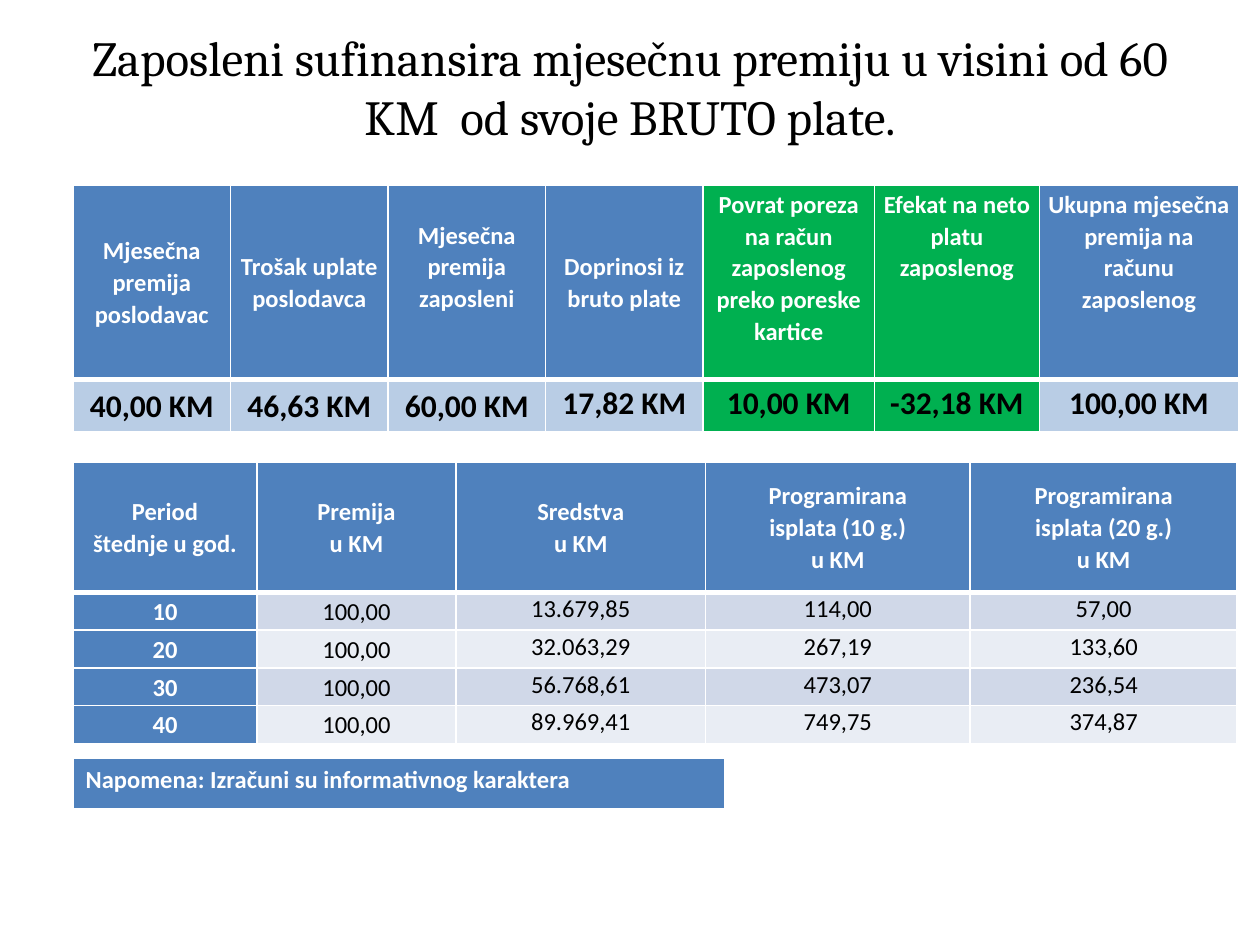
"""Build a slide on how an employee co-finances a monthly pension premium."""
from dataclasses import dataclass

from lxml.etree import SubElement
from pptx import Presentation
from pptx.dml.color import RGBColor
from pptx.enum.text import MSO_ANCHOR, PP_ALIGN
from pptx.oxml.ns import qn
from pptx.util import Inches, Pt


@dataclass(frozen=True)
class Theme:
    title_font: str = "Cambria"
    body_font: str = "Calibri"
    title_size: int = 28
    text_size: int = 14
    amount_size: int = 18
    black: str = "000000"
    white: str = "FFFFFF"
    blue: str = "4F81BD"
    green: str = "00B050"
    light_blue: str = "B9CDE5"
    bands: tuple = ("D0D8E8", "E9EDF4")
    thin: int = 1
    thick: int = 3


THEME = Theme()
LEFT = 0.58

PREMIUM_COLS = [1.25, 1.25, 1.25, 1.25, 1.36, 1.31, 1.58]
PREMIUM_HEADS = [
    "Mjesečna premija poslodavac",
    "Trošak uplate poslodavca",
    "Mjesečna premija zaposleni",
    "Doprinosi iz bruto plate",
    "Povrat poreza na račun zaposlenog preko poreske kartice",
    "Efekat na neto platu zaposlenog",
    "Ukupna mjesečna premija na računu zaposlenog",
]
PREMIUM_AMOUNTS = ["40,00 KM", "46,63 KM", "60,00 KM", "17,82 KM",
                   "10,00 KM", "-32,18 KM", "100,00 KM"]
GREEN_COLS = (4, 5)

SAVINGS_COLS = [1.46, 1.58, 1.98, 2.1, 2.12]
SAVINGS_HEADS = [
    "Period\nštednje u god.",
    "Premija\nu KM",
    "Sredstva\nu KM",
    "Programirana\nisplata (10 g.)\nu KM",
    "Programirana\nisplata (20 g.)\nu KM",
]
SAVINGS_ROWS = [
    ["10", "100,00", "13.679,85", "114,00", "57,00"],
    ["20", "100,00", "32.063,29", "267,19", "133,60"],
    ["30", "100,00", "56.768,61", "473,07", "236,54"],
    ["40", "100,00", "89.969,41", "749,75", "374,87"],
]


def style_paragraph(p, font, size, color, bold=False, align=PP_ALIGN.CENTER):
    """Set alignment and font of a paragraph."""
    p.alignment = align
    p.font.name = font
    p.font.size = Pt(size)
    p.font.bold = bold
    p.font.color.rgb = RGBColor.from_string(color)


def set_borders(cell, top, bottom):
    """Give a cell white borders, ahead of its fill in the XML."""
    tc_pr = cell._tc.get_or_add_tcPr()
    widths = {"a:lnL": THEME.thin, "a:lnR": THEME.thin, "a:lnT": top, "a:lnB": bottom}
    for tag, width in widths.items():
        ln = SubElement(tc_pr, qn(tag), w=str(Pt(width)))
        SubElement(SubElement(ln, qn("a:solidFill")), qn("a:srgbClr"), val=THEME.white)


def fill_cell(cell, text, fill, color=THEME.white, size=THEME.text_size, bold=True,
              middle=True, margin=0.0, align=PP_ALIGN.CENTER, spacing=1.07, side=0.07):
    """Write text into a cell and style it."""
    cell.fill.solid()
    cell.fill.fore_color.rgb = RGBColor.from_string(fill)
    cell.vertical_anchor = MSO_ANCHOR.MIDDLE if middle else MSO_ANCHOR.TOP
    cell.margin_left = cell.margin_right = Inches(side)
    cell.margin_top = cell.margin_bottom = Inches(margin)
    cell.text = text
    for p in cell.text_frame.paragraphs:
        style_paragraph(p, THEME.body_font, size, color, bold, align)
        p.line_spacing = spacing


def add_grid(slide, top, cols, rows):
    """Add a table with the given column widths and row heights."""
    table = slide.shapes.add_table(
        len(rows), len(cols), Inches(LEFT), Inches(top),
        Inches(sum(cols)), Inches(sum(rows))).table
    for column, width in zip(table.columns, cols):
        column.width = Inches(width)
    for r, height in enumerate(rows):
        table.rows[r].height = Inches(height)
        for cell in table.rows[r].cells:
            set_borders(cell, THEME.thick if r == 1 else THEME.thin,
                        THEME.thick if r == 0 else THEME.thin)
    return table


def add_title(slide, text):
    """Add the centred slide title."""
    tf = slide.shapes.add_textbox(Inches(0.5), Inches(0.17), Inches(9), Inches(1.2)).text_frame
    tf.word_wrap = True
    tf.text = text
    style_paragraph(tf.paragraphs[0], THEME.title_font, THEME.title_size, THEME.black)


def add_premium_table(slide):
    """Add the table of monthly premium amounts."""
    table = add_grid(slide, 1.47, PREMIUM_COLS, [1.54, 0.42])
    for c, (head, amount) in enumerate(zip(PREMIUM_HEADS, PREMIUM_AMOUNTS)):
        green = c in GREEN_COLS
        fill_cell(table.cell(0, c), head, THEME.green if green else THEME.blue,
                  middle=c < 4, margin=0.02)
        fill_cell(table.cell(1, c), amount, THEME.green if green else THEME.light_blue,
                  THEME.black, THEME.amount_size, middle=c < 3, margin=0.02)
    table.cell(0, 2).margin_bottom = Inches(0.27)


def add_savings_table(slide):
    """Add the table of savings and payouts by period."""
    table = add_grid(slide, 3.67, SAVINGS_COLS, [1.03] + [0.3] * len(SAVINGS_ROWS))
    for c, head in enumerate(SAVINGS_HEADS):
        fill_cell(table.cell(0, c), head, THEME.blue)
    for r, (period, *values) in enumerate(SAVINGS_ROWS, start=1):
        fill_cell(table.cell(r, 0), period, THEME.blue)
        for c, value in enumerate(values, start=1):
            fill_cell(table.cell(r, c), value, THEME.bands[(r - 1) % 2],
                      THEME.black, bold=False, middle=c == 1)


def add_note(slide, text):
    """Add the one-cell note below the tables."""
    table = add_grid(slide, 6.02, [5.17], [0.41])
    fill_cell(table.cell(0, 0), text, THEME.blue, middle=False, margin=0.05,
              align=PP_ALIGN.LEFT, spacing=1.0, side=0.1)


def main():
    """Build and save the slide."""
    prs = Presentation()
    prs.slide_width, prs.slide_height = Inches(10), Inches(7.5)
    s = prs.slides.add_slide(prs.slide_layouts[6])
    add_title(s, "Zaposleni sufinansira mjesečnu premiju u visini od 60 KM  od svoje BRUTO plate.")
    add_premium_table(s)
    add_savings_table(s)
    add_note(s, "Napomena: Izračuni su informativnog karaktera")
    prs.save("out.pptx")


if __name__ == "__main__":
    main()
